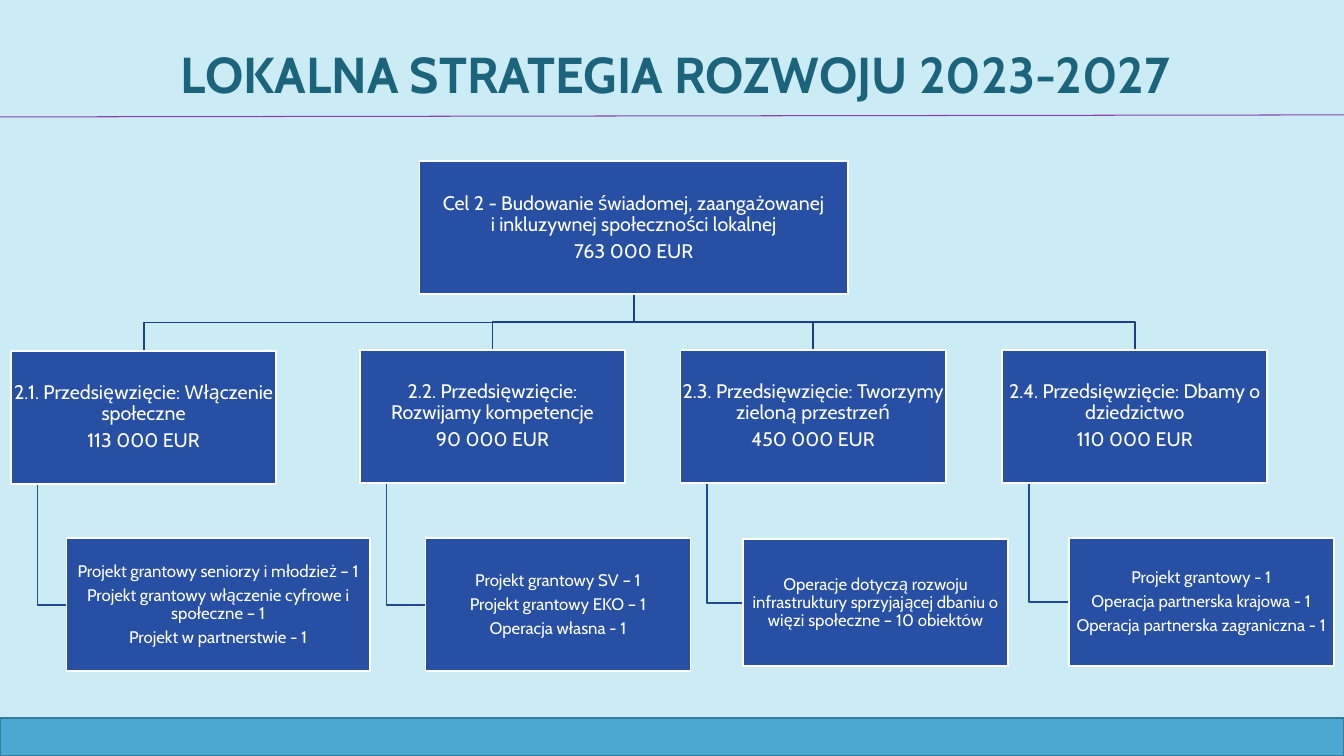
"""Build the slide showing goal 2 of the local development strategy as a tree."""
from lxml.etree import SubElement
from pptx import Presentation
from pptx.dml.color import RGBColor
from pptx.enum.shapes import MSO_CONNECTOR, MSO_SHAPE
from pptx.enum.text import MSO_ANCHOR, PP_ALIGN
from pptx.oxml.ns import qn
from pptx.util import Inches, Pt

TITLE = "LOKALNA STRATEGIA ROZWOJU 2023-2027"
FONT = "Cabin"
WIDTH, HEIGHT = 13.33, 7.5

GOAL = {
    "box": (4.16, 1.6, 4.25, 1.32),
    "lines": [
        "Cel 2 - Budowanie świadomej, zaangażowanej\ni inkluzywnej społeczności lokalnej",
        "763 000 EUR",
    ],
}
MEASURES = [
    {
        "box": (0.11, 3.48, 2.63, 1.32),
        "lines": ["2.1. Przedsięwzięcie: Włączenie społeczne", "113 000 EUR"],
        "project_box": (0.66, 5.34, 3.01, 1.32),
        "projects": [
            "Projekt grantowy seniorzy i młodzież – 1",
            "Projekt grantowy włączenie cyfrowe i społeczne – 1",
            "Projekt w partnerstwie - 1",
        ],
    },
    {
        "box": (3.57, 3.47, 2.63, 1.32),
        "lines": ["2.2. Przedsięwzięcie: Rozwijamy kompetencje", "90 000 EUR"],
        "project_box": (4.22, 5.34, 2.63, 1.32),
        "projects": [
            "Projekt grantowy SV – 1",
            "Projekt grantowy EKO – 1",
            "Operacja własna - 1",
        ],
    },
    {
        "box": (6.75, 3.47, 2.63, 1.32),
        "lines": ["2.3. Przedsięwzięcie: Tworzymy zieloną przestrzeń", "450 000 EUR"],
        "project_box": (7.37, 5.35, 2.63, 1.26),
        "projects": [
            "Operacje dotyczą rozwoju infrastruktury sprzyjającej dbaniu o "
            "więzi społeczne – 10 obiektów",
        ],
    },
    {
        "box": (9.94, 3.47, 2.63, 1.32),
        "lines": ["2.4. Przedsięwzięcie: Dbamy o dziedzictwo", "110 000 EUR"],
        "project_box": (10.6, 5.34, 2.63, 1.27),
        "projects": [
            "Projekt grantowy - 1",
            "Operacja partnerska krajowa - 1",
            "Operacja partnerska zagraniczna - 1",
        ],
    },
]


def color(value):
    return RGBColor.from_string(value)


def set_line(shape, value, width):
    shape.line.color.rgb = color(value)
    shape.line.width = Pt(width)


def add_rectangle(slide, box, fill, outline):
    shape = slide.shapes.add_shape(MSO_SHAPE.RECTANGLE, *map(Inches, box))
    shape.shadow.inherit = False
    shape.fill.solid()
    shape.fill.fore_color.rgb = color(fill)
    set_line(shape, outline, 1.25)
    return shape


def write_run(paragraph, text, size, value, bold=False):
    run = paragraph.add_run()
    run.text = text
    run.font.name = FONT
    run.font.size = Pt(size)
    run.font.bold = bold
    run.font.color.rgb = color(value)


def add_box(slide, box, lines, size):
    frame = add_rectangle(slide, box, "274FA4", "FFFFFF").text_frame
    frame.word_wrap = True
    frame.vertical_anchor = MSO_ANCHOR.MIDDLE
    frame.margin_left = frame.margin_right = Inches(0.01)
    frame.margin_top = frame.margin_bottom = Inches(0.01)
    for index, line in enumerate(lines):
        paragraph = frame.add_paragraph() if index else frame.paragraphs[0]
        paragraph.alignment = PP_ALIGN.CENTER
        paragraph.line_spacing = 0.9
        paragraph.space_after = Pt(4.2)
        for part_index, part in enumerate(line.split("\n")):
            if part_index:
                paragraph.add_line_break()
            write_run(paragraph, part, size, "FFFFFF")


def add_elbow(slide, points, value):
    corners = [(Inches(x), Inches(y)) for x, y in points]
    builder = slide.shapes.build_freeform(*corners[0])
    builder.add_line_segments(corners[1:], close=False)
    shape = builder.convert_to_shape()
    shape.shadow.inherit = False
    shape.fill.background()
    set_line(shape, value, 1.25)


def add_branch(slide, measure):
    goal_left, goal_top, goal_width, goal_height = GOAL["box"]
    left, top, width, height = measure["box"]
    project_left, project_top, _, project_height = measure["project_box"]
    start_x, start_y = goal_left + goal_width / 2, goal_top + goal_height
    center, middle = left + width / 2, (start_y + top) / 2
    add_elbow(
        slide,
        [(start_x, start_y), (start_x, middle), (center, middle), (center, top)],
        "1F3F83",
    )
    stem, project_middle = left + width / 10, project_top + project_height / 2
    add_elbow(
        slide,
        [(stem, top + height), (stem, project_middle), (project_left, project_middle)],
        "234895",
    )


def add_title(slide):
    title = slide.shapes.title
    title.left, title.top, title.width, title.height = map(Inches, (1.2, 0.31, 11, 0.91))
    title.text_frame.vertical_anchor = MSO_ANCHOR.MIDDLE
    paragraph = title.text_frame.paragraphs[0]
    paragraph.alignment = PP_ALIGN.CENTER
    paragraph.line_spacing = 0.9
    write_run(paragraph, TITLE, 36, "1C647B", bold=True)


def main():
    presentation = Presentation()
    presentation.slide_width, presentation.slide_height = Inches(WIDTH), Inches(HEIGHT)
    slide = presentation.slides.add_slide(presentation.slide_layouts[5])
    slide.background.fill.solid()
    slide.background.fill.fore_color.rgb = color("CBECF5")
    add_title(slide)

    for measure in MEASURES:
        add_branch(slide, measure)
    add_box(slide, GOAL["box"], GOAL["lines"], 14)
    for measure in MEASURES:
        add_box(slide, measure["box"], measure["lines"], 14)
        add_box(slide, measure["project_box"], measure["projects"], 12)

    add_rectangle(slide, (0, 7.12, WIDTH, 0.38), "48A8D0", "357C9A")
    rule = slide.shapes.add_connector(
        MSO_CONNECTOR.STRAIGHT, Inches(0), Inches(1.16), Inches(WIDTH), Inches(1.14)
    )
    set_line(rule, "8B42AE", 0.75)
    SubElement(rule.element.spPr, qn("a:effectLst"))
    presentation.save("out.pptx")


if __name__ == "__main__":
    main()
